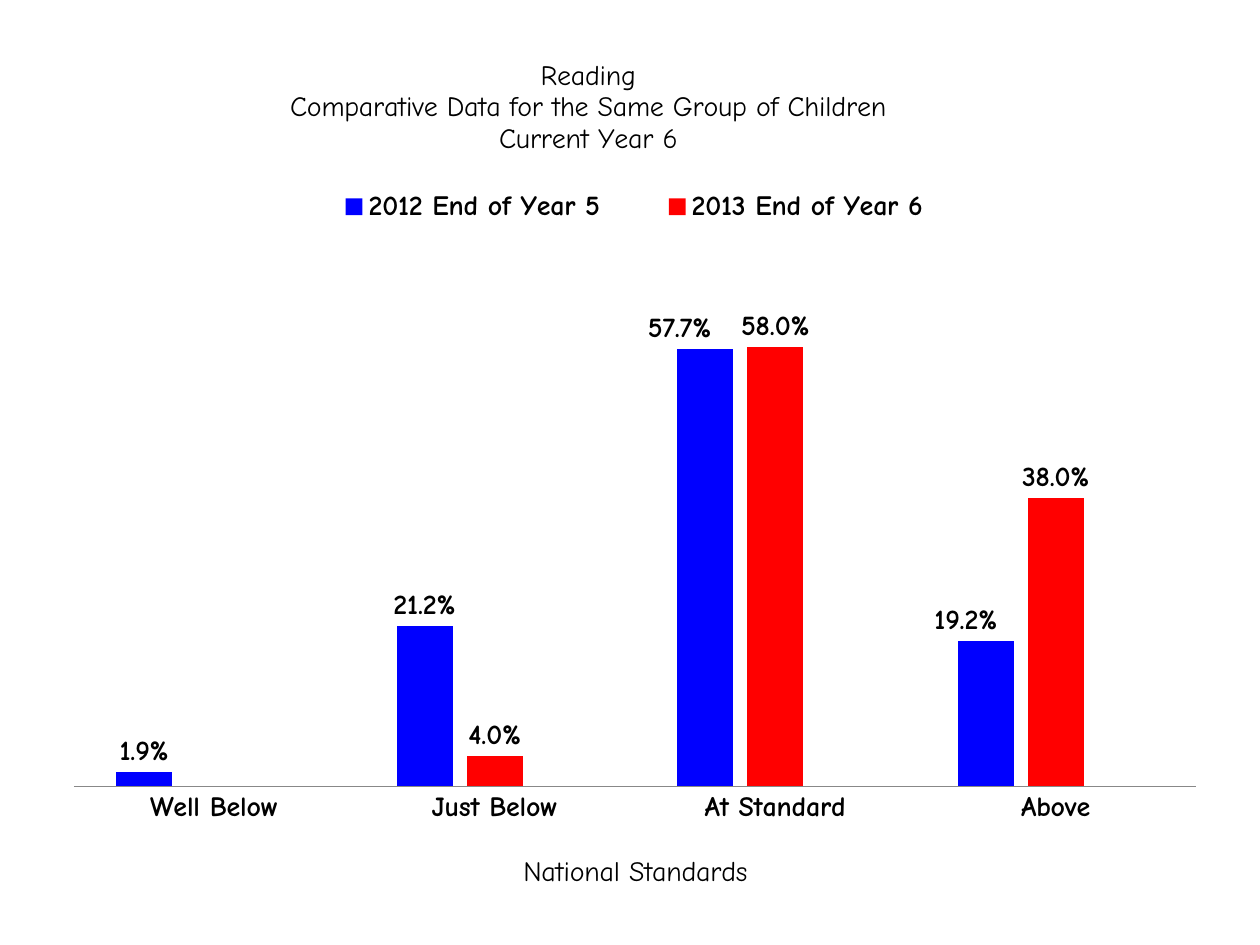
from lxml import etree
from pptx import Presentation
from pptx.chart.data import CategoryChartData
from pptx.dml.color import RGBColor
from pptx.enum import chart as ch
from pptx.oxml.ns import qn
from pptx.util import Inches, Pt

# Content
TITLE = ["Reading", "Comparative Data for the Same Group of Children",
         "Current Year 6"]
AXIS = "National Standards"
CATS = ["Well Below", "Just Below", "At Standard", "Above"]
SERIES = [
    ("2012 End of Year 5", [0.019, 0.212, 0.577, 0.192]),
    ("2013 End of Year 6", [None, 0.04, 0.58, 0.38]),
    ("Series 3", [None] * 4),  # empty slot, hidden in the legend
]
SHIFTS = {2: -0.022, 3: -0.017}  # labels of the first series moved left

THEME = dict(font="Comic Neue", size=Pt(16), text="000000", line="888888",
             bars=["0000FF", "FF0000", "9BBB59"])
PERCENT = "0.0%"


def style(font, bold):
    font.name, font.size, font.bold = THEME["font"], THEME["size"], bold
    font.color.rgb = RGBColor.from_string(THEME["text"])


def write(title, lines):
    frame = title.text_frame
    frame.text = "\n".join(lines)
    for para in frame.paragraphs:
        style(para.font, False)
        for run in para.runs:
            style(run.font, False)


def place(node, after, inner=False, **spots):
    """Give a chart part a manual layout, right after the named child."""
    for old in node.findall(qn("c:layout")):
        node.remove(old)
    layout = etree.Element(qn("c:layout"))
    manual = etree.SubElement(layout, qn("c:manualLayout"))

    def add(tag, val):
        etree.SubElement(manual, qn("c:" + tag)).set("val", str(val))

    if inner:
        add("layoutTarget", "inner")
    if after != "idx":  # data labels are offset from their usual place
        add("xMode", "edge")
        add("yMode", "edge")
    for key, val in spots.items():
        add(key, val)
    if after:
        node.findall(qn("c:" + after))[-1].addnext(layout)
    else:
        node.insert(0, layout)


def main():
    prs = Presentation()
    prs.slide_width, prs.slide_height = Inches(10), Inches(7.5)
    slide = prs.slides.add_slide(prs.slide_layouts[6])

    # Chart
    data = CategoryChartData(number_format=PERCENT)
    data.categories = CATS
    for name, vals in SERIES:
        data.add_series(name, vals)
    chart = slide.shapes.add_chart(
        ch.XL_CHART_TYPE.COLUMN_CLUSTERED, Inches(0.43), Inches(0.29),
        Inches(9.21), Inches(6.93), data).chart
    style(chart.font, False)

    # Title and legend
    chart.has_title = True
    write(chart.chart_title, TITLE)
    place(chart.chart_title._element, "tx", x=0.2, y=0.02)
    chart.has_legend = True
    legend = chart.legend
    legend.position = ch.XL_LEGEND_POSITION.TOP
    legend.include_in_layout = False
    style(legend.font, True)
    entry = etree.Element(qn("c:legendEntry"))
    etree.SubElement(entry, qn("c:idx")).set("val", "2")
    etree.SubElement(entry, qn("c:delete")).set("val", "1")
    legend._element.find(qn("c:legendPos")).addnext(entry)
    place(legend._element, "legendEntry", x=0.2, y=0.17, w=0.6, h=0.05)

    # Axes
    cat, val = chart.category_axis, chart.value_axis
    cat.major_tick_mark = ch.XL_TICK_MARK.NONE
    cat.format.line.color.rgb = RGBColor.from_string(THEME["line"])
    style(cat.tick_labels.font, True)
    write(cat.axis_title, [AXIS])
    place(cat.axis_title._element, "tx", x=0.4, y=0.93)
    val.minimum_scale, val.maximum_scale = 0, 0.7
    val.has_major_gridlines = False
    val.visible = False

    # Bars and their labels
    plot = chart.plots[0]
    plot.gap_width, plot.overlap = 150, -25
    plot.vary_by_categories = False
    place(plot._element.getparent(), None, inner=True,
          x=0.017, y=0.251, w=0.967, h=0.608)
    for bars, color in zip(plot.series, THEME["bars"]):
        bars.format.fill.solid()
        bars.format.fill.fore_color.rgb = RGBColor.from_string(color)
        labels = bars.data_labels
        labels.show_value = True
        labels.number_format = PERCENT
        labels.number_format_is_linked = False
        labels.position = ch.XL_LABEL_POSITION.OUTSIDE_END
        style(labels.font, True)
    for idx, shift in SHIFTS.items():
        label = plot.series[0].points[idx].data_label
        style(label.font, True)
        label.position = ch.XL_LABEL_POSITION.OUTSIDE_END
        place(label._get_or_add_dLbl(), "idx", x=shift, y=0)

    prs.save("out.pptx")


if __name__ == "__main__":
    main()
